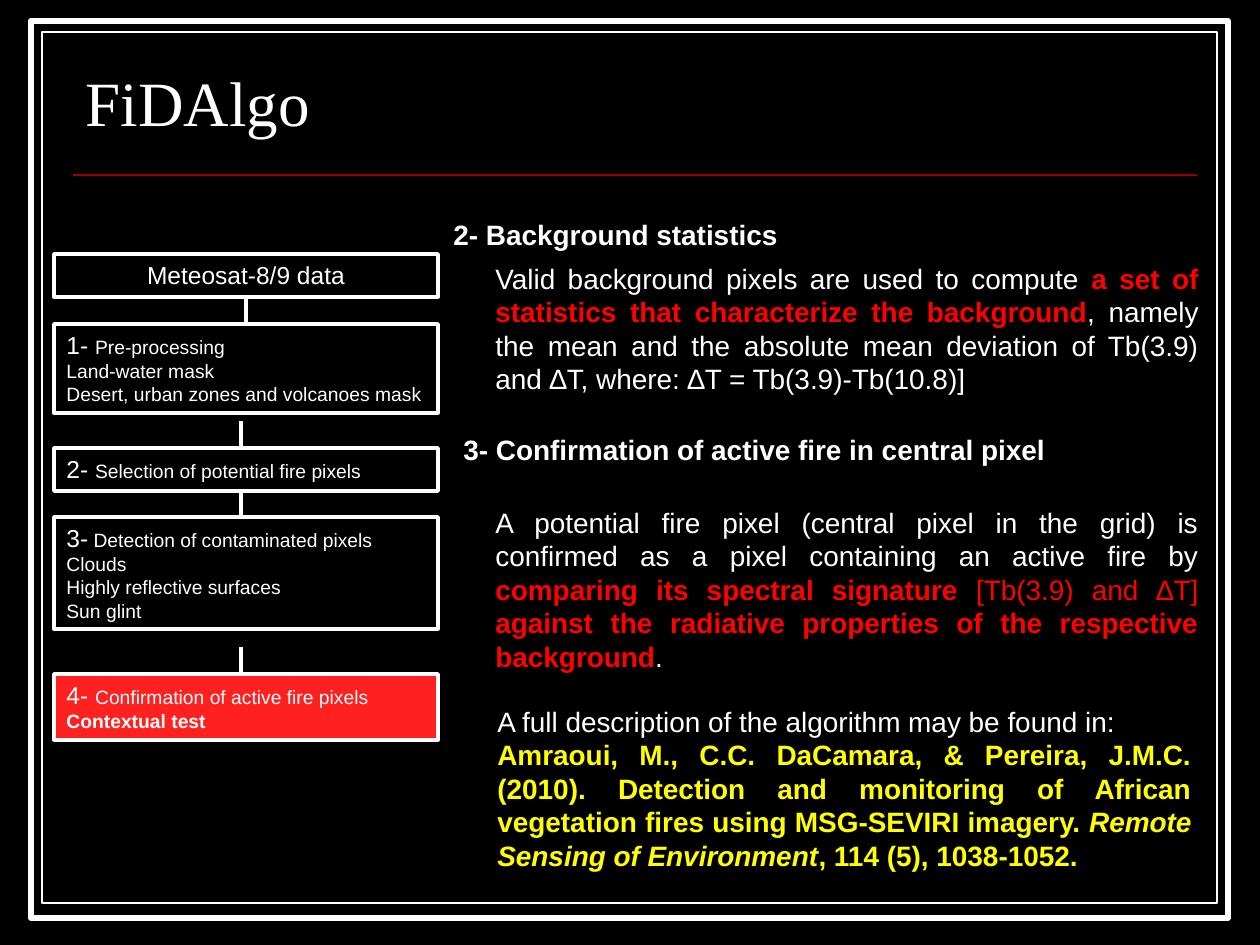
from lxml import etree
from pptx import Presentation
from pptx import util as u
from pptx.dml.color import RGBColor
from pptx.enum import shapes, text
from pptx.oxml.ns import qn

PX = 914400 / 126
WHITE = RGBColor(255, 255, 255)
BLACK = RGBColor(0, 0, 0)
RED = RGBColor(255, 0, 0)
FIRE = RGBColor(255, 32, 32)
RULE = RGBColor(153, 0, 0)
YELLOW = RGBColor(255, 255, 0)
LEFT, MID, JUST = text.PP_ALIGN.LEFT, text.PP_ALIGN.CENTER, text.PP_ALIGN.JUSTIFY


def px(*nums):
    return [u.Emu(round(n * PX)) for n in nums]


def write(shape, paras, size=16, face="Arial", color=WHITE, bold=False,
          align=LEFT, anchor=text.MSO_ANCHOR.TOP, gap=None):
    """Fill a shape; each paragraph is a list of (words, changes) runs."""
    frame = shape.text_frame
    frame.word_wrap = True
    frame.vertical_anchor = anchor
    for i, runs in enumerate(paras):
        para = frame.paragraphs[0] if i == 0 else frame.add_paragraph()
        para.alignment = align
        para.space_before = u.Pt(0)
        if gap:
            para.line_spacing = gap
        for words, diff in runs:
            run = para.add_run()
            run.text = words
            font = run.font
            font.name = face
            font.size = u.Pt(diff.get("size", size))
            font.bold = diff.get("bold", bold)
            font.italic = diff.get("italic", False)
            font.color.rgb = diff.get("color", color)


def rect(slide, box, fill=BLACK, width=2):
    shape = slide.shapes.add_shape(shapes.MSO_SHAPE.RECTANGLE, *px(*box))
    shape.shadow.inherit = False
    shape.fill.solid()
    shape.fill.fore_color.rgb = fill
    shape.line.color.rgb = WHITE
    shape.line.width = u.Pt(width)
    return shape


def line(slide, ends, color=WHITE, width=2):
    link = slide.shapes.add_connector(shapes.MSO_CONNECTOR.STRAIGHT, *px(*ends))
    link.line.color.rgb = color
    link.line.width = u.Pt(width)
    etree.SubElement(link._element.spPr, qn("a:effectLst"))


def frame(slide, box):
    """Draw the double border and the rule under the title."""
    x, y, w, h = box
    rect(slide, box, width=3.5)
    rect(slide, (x + 11, y + 11, w - 22, h - 26), width=0.75)
    line(slide, (x + 42, y + 154, x + w - 31, y + 154), RULE, 1)


def head(slide, box):
    title = slide.shapes.title
    title.left, title.top, title.width, title.height = px(*box)
    write(title, [[("FiDAlgo", {})]], size=36, face="Times New Roman",
          anchor=text.MSO_ANCHOR.BOTTOM, gap=0.8)
    # Bring the title in front of the border
    slide.shapes._spTree.append(title._element)


def flow(slide, box):
    """Draw the column of steps, each with a link ending at its top."""
    x, y, w = box
    steps = [
        (0, 43, "", ["Meteosat-8/9 data"]),
        (70, 89, "1- ", ["Pre-processing", "Land-water mask",
                         "Desert, urban zones and volcanoes mask"]),
        (194, 43, "2- ", ["Selection of potential fire pixels"]),
        (263, 112, "3-", [" Detection of contaminated pixels", "Clouds",
                          "Highly reflective surfaces", "Sun glint"]),
        (420, 66, "4- ", ["Confirmation of active fire pixels",
                          "Contextual test"]),
    ]
    for i, (top, high, mark, rows) in enumerate(steps):
        last = i == len(steps) - 1
        step = rect(slide, (x, y + top, w, high), FIRE if last else BLACK)
        paras = [[(row, {"bold": last and n > 0})] for n, row in enumerate(rows)]
        if mark:
            paras[0].insert(0, (mark, {"size": 14}))
        write(step, paras, size=11 if mark else 14, align=LEFT if mark else MID)
    for i, (top, *_) in enumerate(steps[1:]):
        mid = x + (192 if i == 0 else 187)
        line(slide, (mid, y + top - 27, mid, y + top))


def notes(slide, box):
    """Place the two sections and the reference."""
    x, y = box
    hot = {"color": RED, "bold": True}
    cite = {"color": YELLOW, "bold": True}
    parts = [
        (0, 0, 769, 46, [[("2- Background statistics", {"bold": True})]]),
        (42, 44, 728, 148, [[
            ("Valid background pixels are used to compute ", {}),
            ("a set of statistics that characterize the background", hot),
            (", namely the mean and the absolute mean deviation of Tb(3.9) "
             "and ∆T, where: ∆T = Tb(3.9)-Tb(10.8)]", {})]]),
        (10, 215, 728, 46, [[
            ("3- Confirmation of active fire in central pixel", {"bold": True})]]),
        (42, 288, 728, 217, [[
            ("A potential fire pixel (central pixel in the grid) is confirmed "
             "as a pixel containing an active fire by ", {}),
            ("comparing its spectral signature", hot),
            (" [Tb(3.9) and ∆T] ", {"color": RED}),
            ("against the radiative properties of the respective background", hot),
            (".", {})]]),
        (44, 487, 719, 183, [
            [("A full description of the algorithm may be found in:", {})],
            [("Amraoui, M., C.C. DaCamara, & Pereira, J.M.C. (2010). Detection "
              "and monitoring of African vegetation fires using MSG-SEVIRI "
              "imagery. ", cite),
             ("Remote Sensing of Environment", {**cite, "italic": True}),
             (", 114 (5), 1038-1052.", cite)]]),
    ]
    for left, top, w, h, paras in parts:
        area = slide.shapes.add_textbox(*px(x + left, y + top, w, h))
        write(area, paras, align=JUST)


def main():
    deck = Presentation()
    deck.slide_width, deck.slide_height = px(1260, 945)
    slide = deck.slides.add_slide(deck.slide_layouts[5])
    slide.background.fill.solid()
    slide.background.fill.fore_color.rgb = BLACK
    frame(slide, (31, 21, 1197, 897))
    head(slide, (73, 45, 1124, 100))
    flow(slide, (54, 254, 384))
    notes(slide, (441, 211))
    deck.save("out.pptx")


if __name__ == "__main__":
    main()
